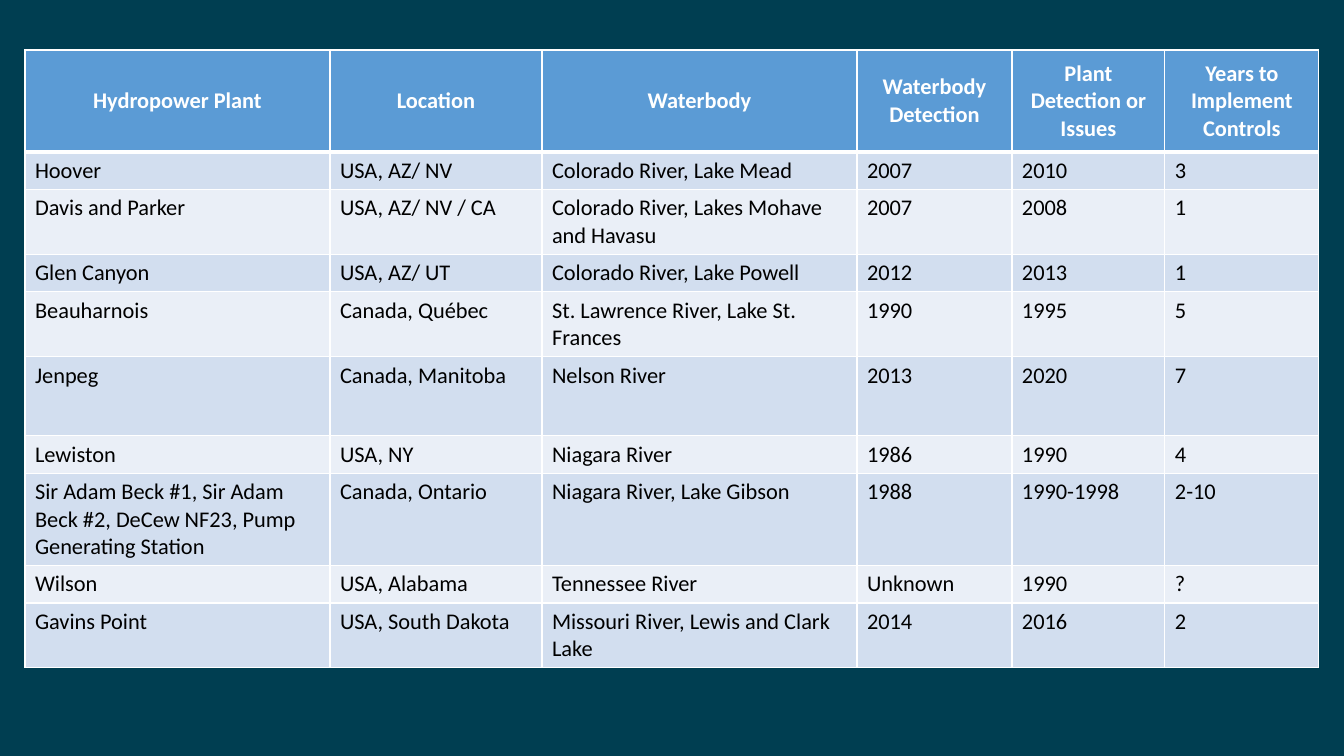
from pptx import Presentation
from pptx.dml.color import RGBColor
from pptx.enum.text import MSO_ANCHOR, PP_ALIGN
from pptx.oxml.ns import qn
from pptx.util import Pt
from lxml.etree import SubElement

PX = 914400 / 100.8  # EMU per pixel
COLORS = {
    "background": "003E51",
    "header": "5B9BD5",
    "odd": "D2DEEF",
    "even": "EAEFF7",
    "border": "FFFFFF",
    "header_text": "FFFFFF",
    "body_text": "000000",
}
COLUMN_WIDTHS = [305, 212, 315, 155, 153, 154]
ROW_HEIGHTS = [102, 34, 34, 34, 34, 79, 34, 56, 34, 34]
PLANTS = [
    ("Hydropower Plant", "Location", "Waterbody", "Waterbody Detection",
     "Plant Detection or Issues", "Years to Implement Controls"),
    ("Hoover", "USA, AZ/ NV", "Colorado River, Lake Mead", "2007", "2010", "3"),
    ("Davis and Parker", "USA, AZ/ NV / CA",
     "Colorado River, Lakes Mohave and Havasu", "2007", "2008", "1"),
    ("Glen Canyon", "USA, AZ/ UT", "Colorado River, Lake Powell", "2012", "2013", "1"),
    ("Beauharnois", "Canada, Québec",
     "St. Lawrence River, Lake St. Frances", "1990", "1995", "5"),
    ("Jenpeg", "Canada, Manitoba", "Nelson River", "2013", "2020", "7"),
    ("Lewiston", "USA, NY", "Niagara River", "1986", "1990", "4"),
    ("Sir Adam Beck #1, Sir Adam Beck #2, DeCew NF23, Pump Generating Station",
     "Canada, Ontario", "Niagara River, Lake Gibson", "1988", "1990-1998", "2-10"),
    ("Wilson", "USA, Alabama", "Tennessee River", "Unknown", "1990", "?"),
    ("Gavins Point", "USA, South Dakota",
     "Missouri River, Lewis and Clark Lake", "2014", "2016", "2"),
]


def px(length):
    return round(length * PX)


def add_borders(cell, widths):
    properties = cell._tc.get_or_add_tcPr()
    for side, width in widths.items():
        line = SubElement(properties, qn(f"a:ln{side}"), w=str(Pt(width)))
        fill = SubElement(line, qn("a:solidFill"))
        SubElement(fill, qn("a:srgbClr"), val=COLORS["border"])


# Slide and background
deck = Presentation()
deck.slide_width = px(1344)
deck.slide_height = px(756)
page = deck.slides.add_slide(deck.slide_layouts[6])
page.background.fill.solid()
page.background.fill.fore_color.rgb = RGBColor.from_string(COLORS["background"])

# Table grid
frame = page.shapes.add_table(len(PLANTS), len(COLUMN_WIDTHS),
                              px(25), px(50), px(sum(COLUMN_WIDTHS)), px(611))
table = frame.table
table.horz_banding = False
for column, width in zip(table.columns, COLUMN_WIDTHS):
    column.width = px(width)
for row, height in zip(table.rows, ROW_HEIGHTS):
    row.height = px(height)
frame.height = px(611)

# Header and plant rows
for row_index, plant in enumerate(PLANTS):
    is_header = row_index == 0
    band = "header" if is_header else "odd" if row_index % 2 else "even"
    text_color = COLORS["header_text" if is_header else "body_text"]
    borders = {"L": 1, "R": 1, "T": 3 if row_index == 1 else 1, "B": 3 if is_header else 1}
    for column_index, text in enumerate(plant):
        cell = table.cell(row_index, column_index)
        add_borders(cell, borders)
        cell.fill.solid()
        cell.fill.fore_color.rgb = RGBColor.from_string(COLORS[band])
        cell.vertical_anchor = MSO_ANCHOR.MIDDLE if is_header else MSO_ANCHOR.TOP
        para = cell.text_frame.paragraphs[0]
        para.alignment = PP_ALIGN.CENTER if is_header else PP_ALIGN.LEFT
        span = para.add_run()
        span.text = text
        span.font.name = "Calibri"
        span.font.size = Pt(16)
        span.font.bold = is_header
        span.font.color.rgb = RGBColor.from_string(text_color)

deck.save("out.pptx")
